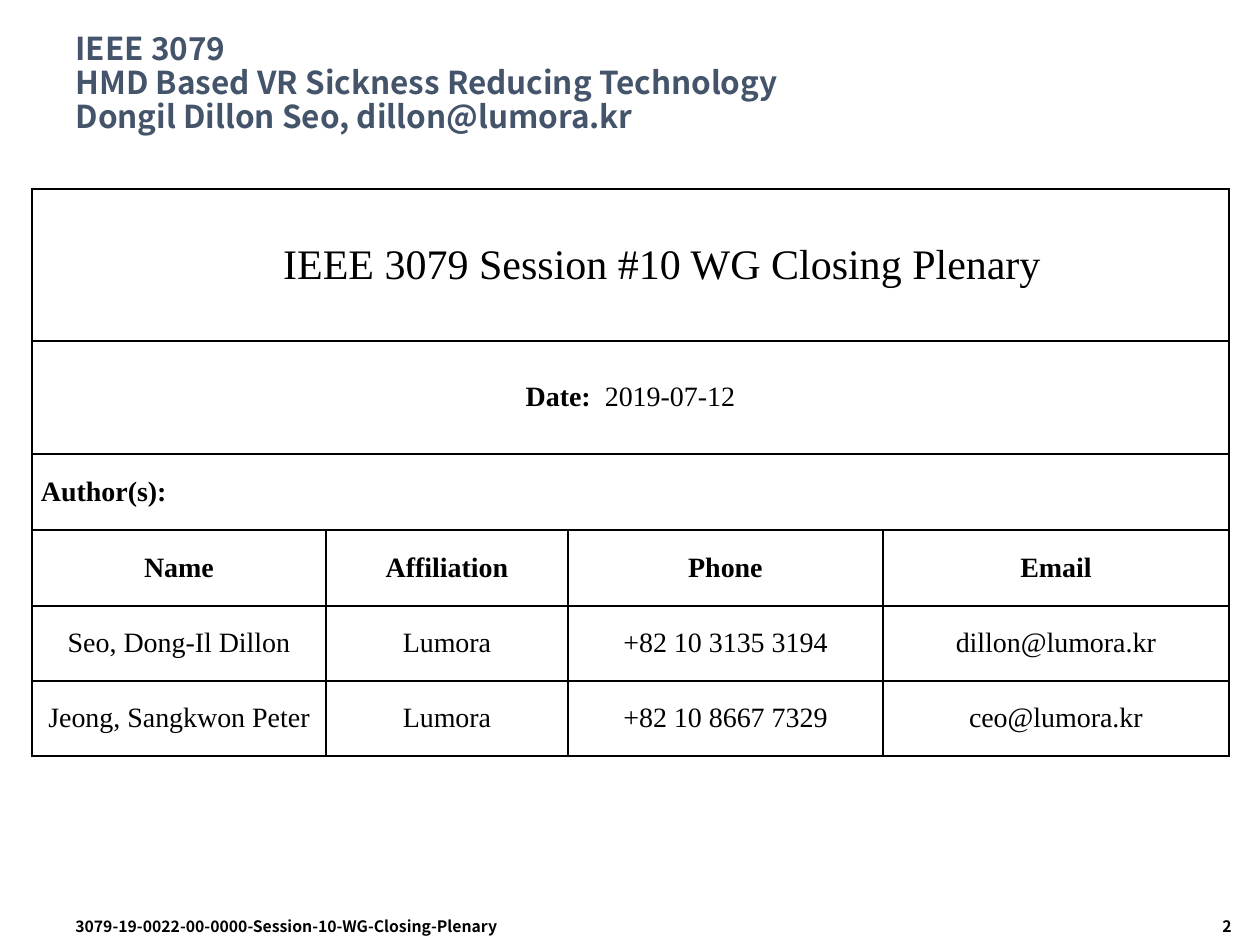
from copy import deepcopy

from lxml.etree import SubElement
from pptx import Presentation
from pptx.dml.color import RGBColor
from pptx.enum.text import MSO_ANCHOR, MSO_AUTO_SIZE, PP_ALIGN
from pptx.oxml.ns import qn
from pptx.util import Emu, Pt

COLORS = {"ink": "000000", "heading": "44546A"}
SANS = "Noto Sans CJK KR"
SERIF = "Times New Roman"
LEFT, CENTER, RIGHT = PP_ALIGN.LEFT, PP_ALIGN.CENTER, PP_ALIGN.RIGHT


def px(length):
    return Emu(round(length * 914400 / 126))


class PlenarySlide:
    def __init__(self, deck):
        self.slide = deck.slides.add_slide(deck.slide_layouts[5])

    def style(self, run, size, face, color="ink", bold=False):
        run.font.size = Pt(size)
        run.font.name = face
        run.font.bold = bold
        run.font.color.rgb = RGBColor.from_string(COLORS[color])

    def title(self, lines, left, top, width, height):
        heading = self.slide.shapes.title
        heading.left, heading.top = px(left), px(top)
        heading.width, heading.height = px(width), px(height)
        frame = heading.text_frame
        frame.text = "\v".join(lines)
        frame.auto_size = MSO_AUTO_SIZE.NONE
        frame.vertical_anchor = MSO_ANCHOR.MIDDLE
        paragraph = frame.paragraphs[0]
        paragraph.alignment = LEFT
        paragraph.line_spacing = 0.9
        for run in paragraph.runs:
            self.style(run, 18, SANS, "heading", True)
        for line_break in paragraph._p.findall(qn("a:br")):
            line_break.append(deepcopy(paragraph.runs[0].font._rPr))

    def footer(self, text, left, width, align=LEFT):
        box = self.slide.shapes.add_textbox(px(left), px(911), px(width), px(34))
        frame = box.text_frame
        frame.word_wrap = True
        frame.text = text
        paragraph = frame.paragraphs[0]
        paragraph.alignment = align
        self.style(paragraph.runs[0], 9, SANS, bold=True)

    def table(self, left, top, columns, rows):
        frame = self.slide.shapes.add_table(
            len(rows), len(columns), px(left), px(top), px(sum(columns)), px(sum(rows)))
        grid = frame.table
        grid.first_row = grid.horz_banding = False
        for column, width in zip(grid.columns, columns):
            column.width = px(width)
        for row, height in zip(grid.rows, rows):
            row.height = px(height)
        for cell in grid.iter_cells():
            self.border(cell)
            cell.fill.background()
            cell.vertical_anchor = MSO_ANCHOR.MIDDLE
            cell.margin_left = cell.margin_right = px(9)
            cell.margin_top = cell.margin_bottom = 0
        return grid

    def border(self, cell):
        properties = cell._tc.get_or_add_tcPr()
        for side in ("lnL", "lnR", "lnT", "lnB"):
            line = SubElement(properties, qn(f"a:{side}"), w=str(Pt(1)))
            fill = SubElement(line, qn("a:solidFill"))
            SubElement(fill, qn("a:srgbClr"), val=COLORS["ink"])

    def cell(self, cell, text, size=16, bold=False, align=CENTER, after=0):
        cell.text = text
        paragraph = cell.text_frame.paragraphs[0]
        paragraph.alignment = align
        paragraph.space_after = Pt(after)
        self.style(paragraph.runs[0], size, SERIF, bold=bold)
        return paragraph

    def band(self, grid, row, text, **look):
        grid.cell(row, 0).merge(grid.cell(row, len(grid.columns) - 1))
        return self.cell(grid.cell(row, 0), text, **look)


def main():
    deck = Presentation()
    deck.slide_width, deck.slide_height = px(1260), px(945)
    page = PlenarySlide(deck)

    page.title(["IEEE 3079", "HMD Based VR Sickness Reducing Technology",
                "Dongil Dillon Seo, dillon@lumora.kr"], 63, 21, 1134, 126)

    grid = page.table(32, 189, [294, 242, 315, 346], [152, 113, 76, 76, 75, 75])
    session = page.band(grid, 0, "IEEE 3079 Session #10 WG Closing Plenary", size=24, after=12)
    session._p.get_or_add_pPr().set("marL", str(px(63)))
    date = page.band(grid, 1, "Date:", bold=True, after=12)
    day = date.add_run()
    day.text = "  2019-07-12"
    page.style(day, 16, SERIF)
    page.band(grid, 2, "Author(s):", bold=True, align=LEFT)

    authors = [
        ("Name", "Affiliation", "Phone", "Email"),
        ("Seo, Dong-Il Dillon", "Lumora", "+82 10 3135 3194", "dillon@lumora.kr"),
        ("Jeong, Sangkwon Peter", "Lumora", "+82 10 8667 7329", "ceo@lumora.kr"),
    ]
    for row, author in enumerate(authors, start=3):
        for column, detail in enumerate(author):
            page.cell(grid.cell(row, column), detail, bold=row == 3)

    page.footer("2", 1040, 204, RIGHT)
    page.footer("3079-19-0022-00-0000-Session-10-WG-Closing-Plenary", 63, 557)
    deck.save("out.pptx")


if __name__ == "__main__":
    main()
